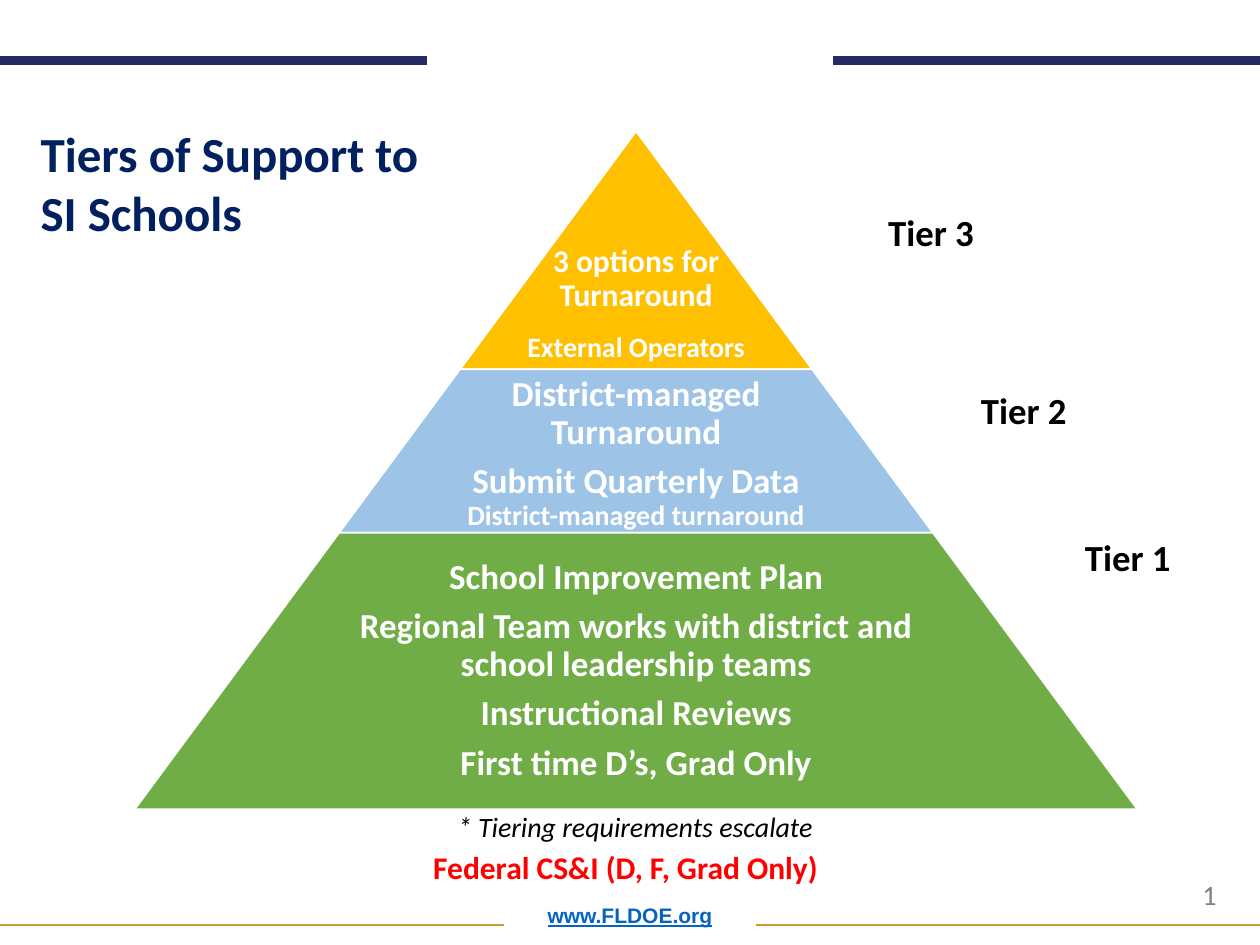
from dataclasses import dataclass

from lxml.etree import SubElement
from pptx import Presentation
from pptx.dml.color import RGBColor
from pptx.enum.shapes import MSO_CONNECTOR, MSO_SHAPE
from pptx.enum.text import MSO_ANCHOR, MSO_AUTO_SIZE, PP_ALIGN
from pptx.oxml import parse_xml
from pptx.oxml.ns import nsdecls, qn
from pptx.util import Pt


@dataclass(frozen=True)
class Theme:
    """Hold the colours, fonts and type sizes of the slide."""
    navy: str = "262A63"
    gold: str = "CD9D2C"
    title: str = "002060"
    link: str = "0563C1"
    gray: str = "7F7F7F"
    red: str = "FF0000"
    black: str = "000000"
    white: str = "FFFFFF"
    amber: str = "FFC000"
    blue: str = "9DC3E6"
    green: str = "70AD47"
    font: str = "Calibri"
    link_font: str = "Arial"
    title_size: int = 28
    label_size: int = 21
    large: int = 20
    medium: int = 18
    small: int = 16
    link_size: int = 12


T = Theme()

TIERS = [
    {"name": "Tier 3", "height": 136, "fill": T.amber, "label": (500, 116.5),
     "text_width": 201, "anchor": MSO_ANCHOR.BOTTOM, "inset": 3.5,
     "lines": [("3 options for", T.medium, 0), ("Turnaround", T.medium, 0),
               ("External Operators", T.small, 11)]},
    {"name": "Tier 2", "height": 93.5, "fill": T.blue, "label": (553, 218),
     "text_width": 221, "anchor": MSO_ANCHOR.BOTTOM, "inset": 1,
     "lines": [("District-managed Turnaround", T.large, 0),
               ("Submit Quarterly Data", T.large, 6.5),
               ("District-managed turnaround", T.small, 0)]},
    {"name": "Tier 1", "height": 158, "fill": T.green, "label": (612.5, 302),
     "text_width": 372, "anchor": MSO_ANCHOR.MIDDLE, "inset": 2,
     "lines": [("School Improvement Plan", T.large, 0),
               ("Regional Team works with district and school leadership teams",
                T.large, 6.5),
               ("Instructional Reviews", T.large, 6.5),
               ("First time D’s, Grad Only", T.large, 6.5)]},
]


def rgb(value):
    """Turn a hex string into a colour."""
    return RGBColor.from_string(value)


def set_attrs(obj, **values):
    """Set each given value on an object."""
    for name, value in values.items():
        setattr(obj, name, value)


def style(font, size, color, name=T.font, **flags):
    """Format a font."""
    set_attrs(font, size=Pt(size), name=name, **flags)
    font.color.rgb = rgb(color)


def add_text(s, box, lines, color, align=PP_ALIGN.CENTER, anchor=MSO_ANCHOR.TOP,
             wrap=True, spacing=1.0, inset=None, **fmt):
    """Add a text box of (text, size, space before) lines."""
    tf = s.shapes.add_textbox(*map(Pt, box)).text_frame
    set_attrs(tf, word_wrap=wrap, vertical_anchor=anchor)
    if inset is not None:
        set_attrs(tf, margin_left=Pt(inset), margin_right=Pt(inset),
                  margin_top=Pt(inset), margin_bottom=Pt(inset))
    for i, (text, size, before) in enumerate(lines):
        p = tf.add_paragraph() if i else tf.paragraphs[0]
        set_attrs(p, alignment=align, line_spacing=spacing)
        if before:
            p.space_before = Pt(before)
        r = p.add_run()
        r.text = text
        style(r.font, size, color, **fmt)
    return tf


def add_rule(s, x, y, width, color, weight):
    """Draw a horizontal rule."""
    line = s.shapes.add_connector(
        MSO_CONNECTOR.STRAIGHT, Pt(x), Pt(y), Pt(x + width), Pt(y))
    line.line.color.rgb = rgb(color)
    line.line.width = Pt(weight)
    SubElement(line._element.spPr, qn("a:effectLst"))


def add_frame(s, x, y, w, h):
    """Add the header and footer rules, web address and slide number."""
    for rule_y, length, color, weight in (
            (34.5, 244, T.navy, 5), (528.5, 288, T.gold, 1)):
        for rule_x in (x, x + w - length):
            add_rule(s, rule_x, y + rule_y, length, color, weight)
    add_text(s, (x + 50, y + h - 36, w - 100, 30),
             [("www.FLDOE.org", T.link_size, 0)], T.link, spacing=0.9,
             anchor=MSO_ANCHOR.BOTTOM, name=T.link_font, bold=True, underline=True)
    tf = add_text(s, (x + w - 40, y + h - 42, 37.5, 27),
                  [("39", T.small, 0)], T.gray, align=PP_ALIGN.LEFT)
    r = tf.paragraphs[0].runs[0]._r
    field = parse_xml(
        f'<a:fld {nsdecls("a")} id="{{B6F15528-21DE-4FAA-801E-634DDDAF4B2B}}"'
        ' type="slidenum"/>')
    r.addprevious(field)
    field.extend(list(r))
    r.getparent().remove(r)


def add_title(s, x, y, w, h):
    """Place and format the title."""
    title = s.shapes.title
    set_attrs(title, left=Pt(x), top=Pt(y), width=Pt(w), height=Pt(h))
    tf = title.text_frame
    tf.text = "Tiers of Support to\nSI Schools"
    set_attrs(tf, vertical_anchor=MSO_ANCHOR.TOP, word_wrap=True,
              auto_size=MSO_AUTO_SIZE.NONE)
    for p in tf.paragraphs:
        set_attrs(p, alignment=PP_ALIGN.LEFT, line_spacing=1.0)
        style(p.font, T.title_size, T.title, bold=True)


def add_pyramid(s, x, y, w, h):
    """Stack the tiers into a pyramid with their text."""
    center, slope, depth = x + w / 2, w / 2 / h, 0
    for tier in TIERS:
        height = tier["height"]
        top, depth = y + depth, depth + height
        width = 2 * slope * depth
        sp = s.shapes.add_shape(MSO_SHAPE.TRAPEZOID, Pt(center - width / 2),
                                Pt(top), Pt(width), Pt(height))
        sp.shadow.inherit = False
        sp.adjustments[0] = slope
        sp.fill.solid()
        sp.fill.fore_color.rgb = rgb(tier["fill"])
        sp.line.color.rgb = rgb(T.white)
        sp.line.width = Pt(1)
        text_width = tier["text_width"]
        add_text(s, (center - text_width / 2, top, text_width, height),
                 tier["lines"], T.white, anchor=tier["anchor"], spacing=0.9,
                 inset=tier["inset"], bold=True)


def add_labels(s, x, y):
    """Name each tier beside the pyramid."""
    for tier in TIERS:
        dx, dy = tier["label"]
        add_text(s, (x + dx, y + dy, 64, 33), [(tier["name"], T.label_size, 0)],
                 T.black, wrap=False, bold=True)


def add_notes_below(s, x, y, w):
    """Add the two lines under the pyramid."""
    add_text(s, (x + 133, y, 270, 27),
             [("* Tiering requirements escalate", T.small, 0)], T.black, italic=True)
    add_text(s, (x, y + 22, w, 29),
             [("Federal CS&I (D, F, Grad Only)", T.medium, 0)], T.red, bold=True)


def main():
    """Build and save the slide."""
    prs = Presentation()
    set_attrs(prs, slide_width=Pt(720), slide_height=Pt(540))
    s = prs.slides.add_slide(prs.slide_layouts[5])
    add_frame(s, 0, 0, 720, 540)
    add_title(s, 16, 67, 243, 75)
    add_pyramid(s, 77, 75, 573, 387.5)
    add_labels(s, 0, 0)
    add_notes_below(s, 95, 459, 525)
    prs.save("out.pptx")


if __name__ == "__main__":
    main()
